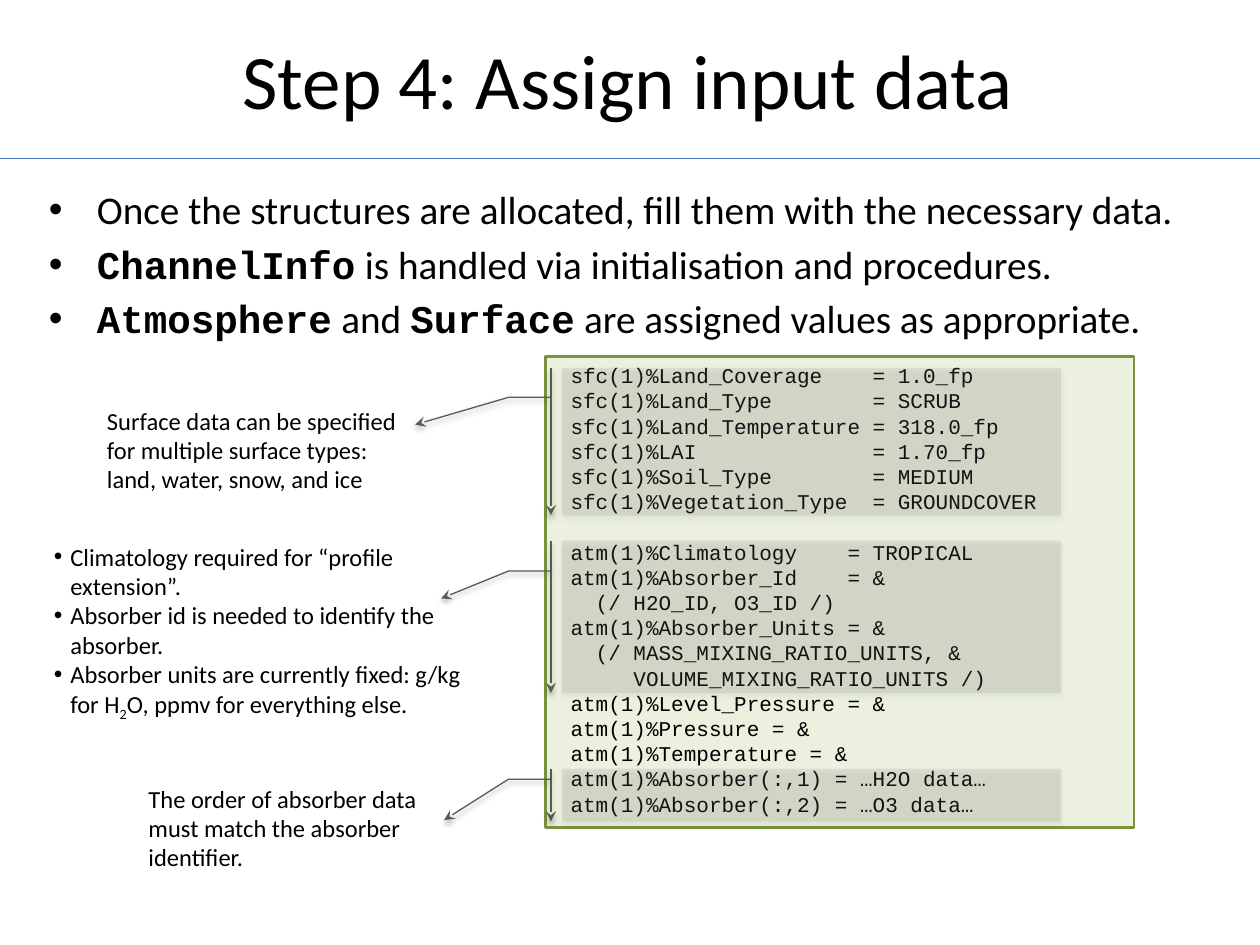
"""Build the slide on assigning input data to the model structures."""
from lxml import etree
from pptx import Presentation
from pptx import util as u
from pptx.dml.color import RGBColor
from pptx.enum import shapes, text
from pptx.oxml import ns

COLORS = {"ink": "000000", "rule": "4B7EBC", "code_fill": "EBF1DE",
          "code_edge": "77933C", "highlight": "808080", "callout": "595959"}
BODY, MONO = "Calibri", "Courier New"
CODE_PITCH = 14.4

SURFACE_CODE = """\
 sfc(1)%Land_Coverage    = 1.0_fp
 sfc(1)%Land_Type        = SCRUB
 sfc(1)%Land_Temperature = 318.0_fp
 sfc(1)%LAI              = 1.70_fp
 sfc(1)%Soil_Type        = MEDIUM
 sfc(1)%Vegetation_Type  = GROUNDCOVER"""
ATMOSPHERE_CODE = """\
 atm(1)%Climatology    = TROPICAL
 atm(1)%Absorber_Id    = &
   (/ H2O_ID, O3_ID /)
 atm(1)%Absorber_Units = &
   (/ MASS_MIXING_RATIO_UNITS, &
      VOLUME_MIXING_RATIO_UNITS /)
 atm(1)%Level_Pressure = &
 atm(1)%Pressure = &
 atm(1)%Temperature = &
 atm(1)%Absorber(:,1) = …H2O data…
 atm(1)%Absorber(:,2) = …O3 data…"""

STEPS = [
    [("Once the structures are allocated, fill them with the necessary data.", "")],
    [("ChannelInfo", "code"), (" is handled via initialisation and procedures.", "")],
    [("Atmosphere", "code"), (" and ", ""), ("Surface", "code"),
     (" are assigned values as appropriate.", "")],
]
SURFACE_NOTE = [[("Surface data can be specified for multiple surface types: "
                  "land, water, snow, and ice", "")]]
ABSORBER_NOTE = [
    [("Climatology required for “profile extension”.", "")],
    [("Absorber id is needed to identify the absorber.", "")],
    [("Absorber units are currently fixed: g/kg for H", ""), ("2", "sub"),
     ("O, ppmv for everything else.", "")],
]
ORDER_NOTE = [[("The order of absorber data must match the absorber identifier.", "")]]


def color(name):
    return RGBColor.from_string(COLORS[name])


def box(place):
    return [u.Inches(length) for length in place]


def add_xml(parent, tag, **attributes):
    return etree.SubElement(parent, ns.qn(tag), attributes)


def add_run(paragraph, words, size, style=""):
    run = paragraph.add_run()
    run.text = words
    run.font.size = u.Pt(size)
    run.font.name = MONO if style in ("code", "listing") else BODY
    run.font.bold = style == "code"
    run.font.color.rgb = color("ink")
    if style == "sub":
        run.font._element.set("baseline", "-25000")


def add_bullet(paragraph, indent):
    properties = paragraph._p.get_or_add_pPr()
    properties.set("marL", str(u.Inches(indent)))
    properties.set("indent", str(-u.Inches(indent)))
    add_xml(properties, "a:buFont", typeface="Arial")
    add_xml(properties, "a:buChar", char="•")


def add_text(slide, place, paragraphs, size, indent=0, gap=0):
    frame = slide.shapes.add_textbox(*box(place)).text_frame
    frame.word_wrap = True
    for index, runs in enumerate(paragraphs):
        paragraph = frame.add_paragraph() if index else frame.paragraphs[0]
        if indent:
            add_bullet(paragraph, indent)
        if index and gap:
            paragraph.space_before = u.Pt(gap)
        for words, style in runs:
            add_run(paragraph, words, size, style)
    return frame


def add_title(slide, title):
    frame = add_text(slide, (1.15, 0, 7.67, 1.25), [[(title, "")]], 44)
    frame.vertical_anchor = text.MSO_ANCHOR.MIDDLE
    frame.paragraphs[0].alignment = text.PP_ALIGN.CENTER


def add_rule(slide, top):
    rule = slide.shapes.add_connector(
        shapes.MSO_CONNECTOR.STRAIGHT, *box((0, top, 10, top)))
    rule.line.color.rgb = color("rule")
    rule.line.width = u.Pt(0.75)
    add_xml(rule._element.spPr, "a:effectLst")


def add_filled(slide, kind, place, fill, edge, width):
    shape = slide.shapes.add_shape(kind, *box(place))
    shape.shadow.inherit = False
    shape.fill.solid()
    shape.fill.fore_color.rgb = color(fill)
    shape.line.color.rgb = color(edge)
    shape.line.width = u.Pt(width)
    return shape


def add_code(slide, place, blocks):
    panel = add_filled(slide, shapes.MSO_SHAPE.RECTANGLE, place,
                       "code_fill", "code_edge", 1.5)
    frame = panel.text_frame
    frame.word_wrap = True
    frame.vertical_anchor = text.MSO_ANCHOR.TOP
    for block_index, block in enumerate(blocks):
        for line_index, line in enumerate(block.splitlines()):
            first = block_index == line_index == 0
            paragraph = frame.paragraphs[0] if first else frame.add_paragraph()
            paragraph.alignment = text.PP_ALIGN.LEFT
            paragraph.line_spacing = u.Pt(CODE_PITCH)
            if block_index and not line_index:
                paragraph.space_before = u.Pt(CODE_PITCH)
            add_run(paragraph, line, 12, "listing")


def add_callout(slide, top, height, tip_y, tip_x):
    callout = add_filled(slide, shapes.MSO_SHAPE.LINE_CALLOUT_2_ACCENT_BAR,
                         (4.46, top, 3.96, height), "highlight", "callout", 0.75)
    for index, value in enumerate((0.2, -0.022, 0.2, -0.107, tip_y, tip_x)):
        callout.adjustments[index] = value
    properties = callout._element.spPr
    add_xml(properties.find(".//" + ns.qn("a:srgbClr")), "a:alpha", val="15000")
    add_xml(properties.find(ns.qn("a:ln")), "a:tailEnd", type="stealth")
    shadow = add_xml(properties.find(ns.qn("a:effectLst")), "a:outerShdw",
                     blurRad=str(u.Pt(3.1)), dist=str(u.Pt(1.8)),
                     dir="5400000", rotWithShape="0")
    shade = add_xml(shadow, "a:srgbClr", val=COLORS["ink"])
    add_xml(shade, "a:alpha", val="35000")


def main():
    deck = Presentation()
    deck.slide_width, deck.slide_height = u.Inches(10), u.Inches(7.5)
    slide = deck.slides.add_slide(deck.slide_layouts[6])
    add_rule(slide, 1.26)
    add_title(slide, "Step 4: Assign input data")
    add_text(slide, (0.29, 1.42, 9.42, 1.33), STEPS, 22.4, indent=0.38, gap=4.48)
    add_code(slide, (4.33, 2.83, 4.67, 3.74), [SURFACE_CODE, ATMOSPHERE_CODE])

    add_callout(slide, 2.92, 1.17, 0.385, -0.294)
    add_text(slide, (0.75, 3.17, 2.58, 0.92), SURFACE_NOTE, 14)
    add_callout(slide, 4.29, 1.21, 0.38, -0.242)
    add_text(slide, (0.33, 4.25, 3.58, 1.5), ABSORBER_NOTE, 14, indent=0.13)
    add_callout(slide, 6.1, 0.42, 0.971, -0.236)
    add_text(slide, (1.08, 6.17, 2.58, 0.6), ORDER_NOTE, 14)
    deck.save("out.pptx")


if __name__ == "__main__":
    main()
